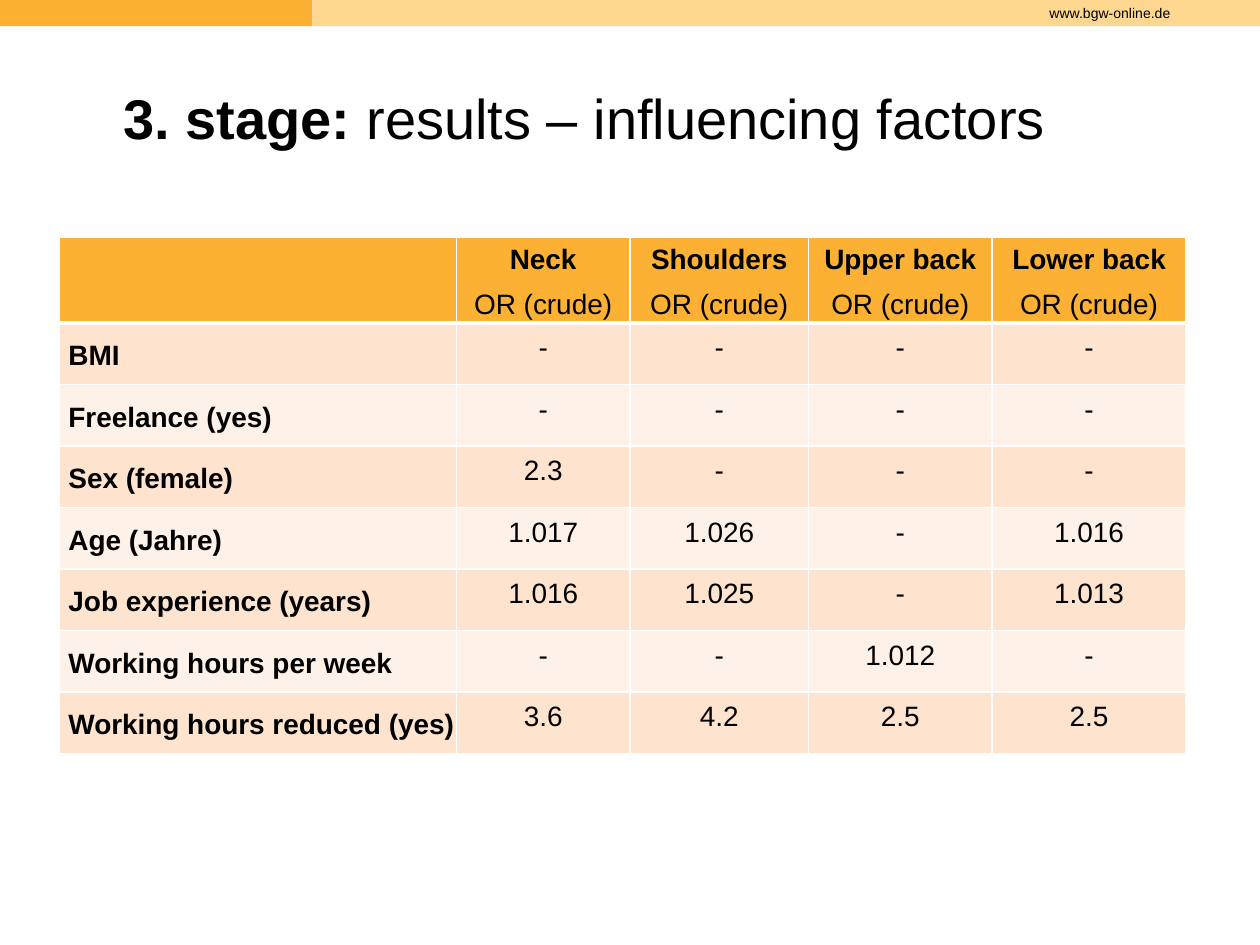
from dataclasses import dataclass

from lxml.etree import SubElement as Sub
from pptx import Presentation
from pptx.dml.color import RGBColor as Rgb
from pptx.enum.shapes import MSO_SHAPE as Kind
from pptx.enum.text import MSO_ANCHOR as Anchor, PP_ALIGN as Align
from pptx.oxml.ns import qn
from pptx.util import Cm, Pt


@dataclass(frozen=True)
class Theme:
    face: str = "Arial"
    ink: str = "000000"
    gold: str = "FCB135"
    sand: str = "FED790"
    bands: tuple = ("FEE4CE", "FEF2E8")
    rule: str = "FFFFFF"
    title: int = 32
    body: int = 16
    small: int = 8
    lead: float = 1.1


THEME = Theme()
WIDE, HIGH, BAR, SPLIT = 25.4, 19.05, 0.53, 6.3
COLS = (8, 3.5, 3.6, 3.7, 3.91)
HEAD, ROW = 1.4, 1.24
SITES = ("Neck", "Shoulders", "Upper back", "Lower back")
ROWS = (
    ("BMI", "-", "-", "-", "-"),
    ("Freelance (yes)", "-", "-", "-", "-"),
    ("Sex (female)", "2.3", "-", "-", "-"),
    ("Age (Jahre)", "1.017", "1.026", "-", "1.016"),
    ("Job experience (years)", "1.016", "1.025", "-", "1.013"),
    ("Working hours per week", "-", "-", "1.012", "-"),
    ("Working hours reduced (yes)", "3.6", "4.2", "2.5", "2.5"),
)


def style(para, size, bold=False, align=Align.LEFT, lead=THEME.lead):
    font = para.font
    font.name, font.size, font.bold = THEME.face, Pt(size), bold
    font.color.rgb = Rgb.from_string(THEME.ink)
    para.alignment, para.line_spacing = align, lead


def add_bar(slide, left, width, fill):
    bar = slide.shapes.add_shape(Kind.RECTANGLE, Cm(left), 0, Cm(width), Cm(BAR))
    bar.shadow.inherit = False
    bar.fill.solid()
    bar.fill.fore_color.rgb = Rgb.from_string(fill)
    bar.line.fill.background()
    return bar


def add_site(bar, text):
    frame = bar.text_frame
    frame.word_wrap = False
    frame.vertical_anchor = Anchor.MIDDLE
    frame.margin_right = Cm(1.8)
    para = frame.paragraphs[0]
    para.text = text
    style(para, THEME.small, align=Align.RIGHT, lead=1.0)


def add_title(slide, stage, topic):
    box = slide.shapes.add_textbox(Cm(2.24), Cm(1.42), Cm(21.8), Cm(1.93))
    box.text_frame.word_wrap = True
    para = box.text_frame.paragraphs[0]
    style(para, THEME.title)
    for text, bold in ((stage, True), (topic, False)):
        run = para.add_run()
        run.text, run.font.bold = text, bold


def paint(cell, fill, base=1):
    props = cell._tc.get_or_add_tcPr()
    for side, width in (("L", 1), ("R", 1), ("T", 1), ("B", base)):
        line = Sub(props, qn(f"a:ln{side}"), w=str(Pt(width)))
        Sub(Sub(line, qn("a:solidFill")), qn("a:srgbClr"), val=THEME.rule)
    cell.fill.solid()
    cell.fill.fore_color.rgb = Rgb.from_string(fill)


def tighten(cell, left=0.03):
    cell.vertical_anchor = Anchor.MIDDLE
    cell.margin_left, cell.margin_right = Cm(left), Cm(0.03)
    cell.margin_top, cell.margin_bottom = Cm(0.03), 0


def fill_head(cells):
    for cell in cells:
        paint(cell, THEME.gold, 3)
    for cell, site in zip(cells[1:], SITES):
        tighten(cell)
        frame = cell.text_frame
        frame.text = f"{site}\nOR (crude)"
        name, unit = frame.paragraphs
        style(name, THEME.body, True, Align.CENTER)
        style(unit, THEME.body, align=Align.CENTER)
        unit.space_before = Pt(6)


def fill_row(cells, texts, fill):
    for col, (cell, text) in enumerate(zip(cells, texts)):
        paint(cell, fill)
        cell.text = text
        label = col == 0
        if label:
            tighten(cell, 0.18)
        style(cell.text_frame.paragraphs[0], THEME.body, label,
              Align.LEFT if label else Align.CENTER)


def add_grid(slide):
    grid = slide.shapes.add_table(len(ROWS) + 1, len(COLS), Cm(1.2), Cm(4.78),
                                  Cm(sum(COLS)), Cm(10.24)).table
    for col, width in zip(grid.columns, COLS):
        col.width = Cm(width)
    head, *rows = grid.rows
    head.height = Cm(HEAD)
    fill_head(list(head.cells))
    for num, (row, texts) in enumerate(zip(rows, ROWS)):
        row.height = Cm(ROW)
        fill_row(row.cells, texts, THEME.bands[num % 2])


def main():
    """Build the slide of factors that influence pain by body site."""
    deck = Presentation()
    deck.slide_width, deck.slide_height = Cm(WIDE), Cm(HIGH)
    slide = deck.slides.add_slide(deck.slide_layouts[6])
    add_bar(slide, 0, SPLIT, THEME.gold)
    add_site(add_bar(slide, SPLIT, WIDE - SPLIT, THEME.sand), "www.bgw-online.de")
    add_title(slide, "3. stage: ", "results – influencing factors")
    add_grid(slide)
    deck.save("out.pptx")


if __name__ == "__main__":
    main()
